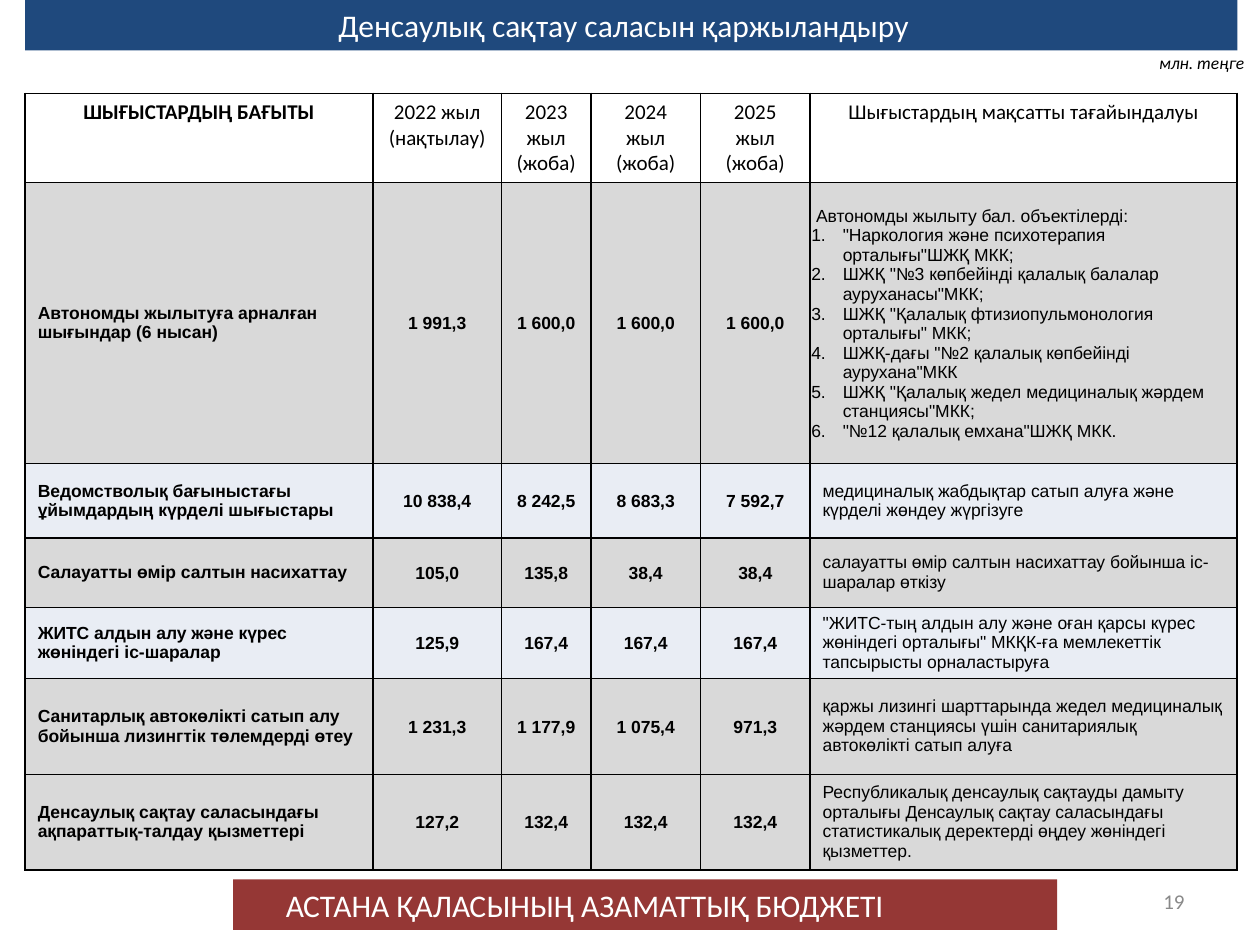
from lxml import etree
from pptx import Presentation
from pptx import util as u
from pptx.dml.color import RGBColor
from pptx.enum import shapes, text
from pptx.oxml.ns import qn

# Content
TITLE = "Денсаулық сақтау саласын қаржыландыру"
UNIT = "млн. теңге"
FOOT = "АСТАНА ҚАЛАСЫНЫҢ АЗАМАТТЫҚ БЮДЖЕТІ"
PAGE = "19"
HEAD = [
    ["ШЫҒЫСТАРДЫҢ БАҒЫТЫ"],
    ["2022 жыл", "(нақтылау)"],
    ["2023 жыл", "(жоба)"],
    ["2024 жыл", "(жоба)"],
    ["2025 жыл", "(жоба)"],
    ["Шығыстардың мақсатты тағайындалуы"],
]
SITES = [
    " Автономды жылыту бал. объектілерді:",
    '"Наркология және психотерапия орталығы"ШЖҚ МКК;',
    'ШЖҚ "№3 көпбейінді қалалық балалар ауруханасы"МКК;',
    'ШЖҚ "Қалалық фтизиопульмонология орталығы" МКК;',
    'ШЖҚ-дағы "№2 қалалық көпбейінді аурухана"МКК',
    'ШЖҚ "Қалалық жедел медициналық жәрдем станциясы"МКК;',
    '"№12 қалалық емхана"ШЖҚ МКК.',
]
# Name, four yearly sums, purpose, fill, row height
ROWS = [
    ("Автономды жылытуға арналған шығындар (6 нысан)",
     ["1 991,3", "1 600,0", "1 600,0", "1 600,0"], SITES, "gray", 2.23),
    ("Ведомстволық бағыныстағы ұйымдардың күрделі шығыстары",
     ["10 838,4", "8 242,5", "8 683,3", "7 592,7"],
     ["медициналық жабдықтар сатып алуға және күрделі жөндеу жүргізуге"],
     "pale", 0.59),
    ("Салауатты өмір салтын насихаттау",
     ["105,0", "135,8", "38,4", "38,4"],
     ["салауатты өмір салтын насихаттау бойынша іс-шаралар өткізу"],
     "gray", 0.55),
    ("ЖИТС алдын алу және күрес жөніндегі іс-шаралар",
     ["125,9", "167,4", "167,4", "167,4"],
     ['"ЖИТС-тың алдын алу және оған қарсы күрес жөніндегі орталығы" '
      "МКҚК-ға мемлекеттік тапсырысты орналастыруға"], "pale", 0.55),
    ("Санитарлық автокөлікті сатып алу бойынша лизингтік төлемдерді өтеу",
     ["1 231,3", "1 177,9", "1 075,4", "971,3"],
     ["қаржы лизингі шарттарында жедел медициналық жәрдем станциясы үшін "
      "санитариялық автокөлікті сатып алуға"], "gray", 0.76),
    ("Денсаулық сақтау саласындағы ақпараттық-талдау қызметтері",
     ["127,2", "132,4", "132,4", "132,4"],
     ["Республикалық денсаулық сақтауды дамыту орталығы Денсаулық сақтау "
      "саласындағы статистикалық деректерді өңдеу жөніндегі қызметтер."],
     "gray", 0.76),
]

# Theme
THEME = {
    "navy": "1F497D", "red": "953735", "gray": "D9D9D9", "pale": "E9EDF4",
    "white": "FFFFFF", "black": "000000", "dim": "898989",
    "sans": "Calibri", "body": "Arial",
    "big": 18, "mid": 12, "small": 10, "line": 1,
}

# Grid, in inches
WIDE, HIGH = 10, 7.5
EDGE, TOP, BAR = 0.2, 0.74, 0.4
COLS = [2.76, 1.02, 0.71, 0.87, 0.87, 3.39]
HEAD_H = 0.64
SPAN = sum(COLS)
THIN = 0.01

LEFT, MID, RIGHT, JUST = (text.PP_ALIGN.LEFT, text.PP_ALIGN.CENTER,
                          text.PP_ALIGN.RIGHT, text.PP_ALIGN.JUSTIFY)


def tint(name):
    return RGBColor.from_string(THEME[name])


def write(frame, lines, size, face="sans", hue="black", align=LEFT,
          bold=False, slant=False):
    for i, line in enumerate(lines):
        par = frame.paragraphs[0] if i == 0 else frame.add_paragraph()
        par.alignment = align
        run = par.add_run()
        run.text = line
        font = run.font
        font.size, font.name = u.Pt(THEME[size]), THEME[face]
        font.bold, font.italic = bold, slant
        font.color.rgb = tint(hue)


def number(par):
    props = par._p.get_or_add_pPr()
    props.set("marL", str(u.Inches(0.25)))
    props.set("indent", str(-u.Inches(0.25)))
    etree.SubElement(props, qn("a:buAutoNum"), type="arabicPeriod")


def border(cell):
    props = cell._tc.get_or_add_tcPr()
    for side in ("lnL", "lnR", "lnT", "lnB"):
        line = etree.SubElement(props, qn("a:" + side),
                                w=str(u.Pt(THEME["line"])))
        fill = etree.SubElement(line, qn("a:solidFill"))
        etree.SubElement(fill, qn("a:srgbClr"), val=THEME["black"])


def fill_cell(cell, lines, fill, tight=False, center=True, **style):
    border(cell)
    cell.fill.solid()
    cell.fill.fore_color.rgb = tint(fill)
    if center:
        cell.vertical_anchor = text.MSO_ANCHOR.MIDDLE
    if tight:
        cell.margin_left = cell.margin_right = u.Inches(THIN)
        cell.margin_top, cell.margin_bottom = u.Inches(THIN), 0
    write(cell.text_frame, lines, **style)


def bar(slide, box, fill):
    shape = slide.shapes.add_shape(shapes.MSO_SHAPE.RECTANGLE,
                                   *map(u.Inches, box))
    shape.shadow.inherit = False
    shape.fill.solid()
    shape.fill.fore_color.rgb = tint(fill)
    shape.line.fill.background()
    return shape


def label(slide, box, line, anchor=text.MSO_ANCHOR.TOP, **style):
    frame = slide.shapes.add_textbox(*map(u.Inches, box)).text_frame
    frame.word_wrap = True
    frame.vertical_anchor = anchor
    write(frame, [line], **style)


def add_grid(slide):
    tall = [HEAD_H] + [row[-1] for row in ROWS]
    box = (EDGE, TOP, SPAN, sum(tall))
    table = slide.shapes.add_table(len(tall), len(COLS),
                                   *map(u.Inches, box)).table
    for col, size in zip(table.columns, COLS):
        col.width = u.Inches(size)
    for row, size in zip(table.rows, tall):
        row.height = u.Inches(size)

    # Header row
    for c, lines in enumerate(HEAD):
        fill_cell(table.cell(0, c), lines, "white", center=False,
                  size="mid", align=MID, bold=c == 0)

    # Spending rows
    for r, (name, sums, goal, fill, _) in enumerate(ROWS, 1):
        base = {"fill": fill, "size": "small", "face": "body"}
        fill_cell(table.cell(r, 0), [name], bold=True, **base)
        for c, value in enumerate(sums, 1):
            fill_cell(table.cell(r, c), [value], tight=True, align=MID,
                      bold=True, **base)
        last = table.cell(r, len(COLS) - 1)
        fill_cell(last, goal, tight=len(goal) > 1, **base)
        for par in last.text_frame.paragraphs[1:]:
            number(par)


def main():
    deck = Presentation()
    deck.slide_width, deck.slide_height = u.Inches(WIDE), u.Inches(HIGH)
    slide = deck.slides.add_slide(deck.slide_layouts[6])

    add_grid(slide)

    # Title bar and unit
    head = bar(slide, (EDGE, 0, SPAN, BAR), "navy").text_frame
    head.word_wrap = True
    head.margin_right = u.Inches(0.22)
    head.vertical_anchor = text.MSO_ANCHOR.MIDDLE
    write(head, [TITLE], size="big", hue="white", align=MID)
    label(slide, (9.1, 0.36, 1.09, 0.27), UNIT, size="small", slant=True)

    # Footer bar and page number
    bar(slide, (1.85, 6.98, 6.54, BAR), "red")
    label(slide, (2.17, 6.98, 5.83, BAR), FOOT, size="big", hue="white",
          align=JUST)
    label(slide, (7.17, 6.95, 2.33, BAR), PAGE, text.MSO_ANCHOR.MIDDLE,
          size="mid", hue="dim", align=RIGHT)

    deck.save("out.pptx")


if __name__ == "__main__":
    main()
